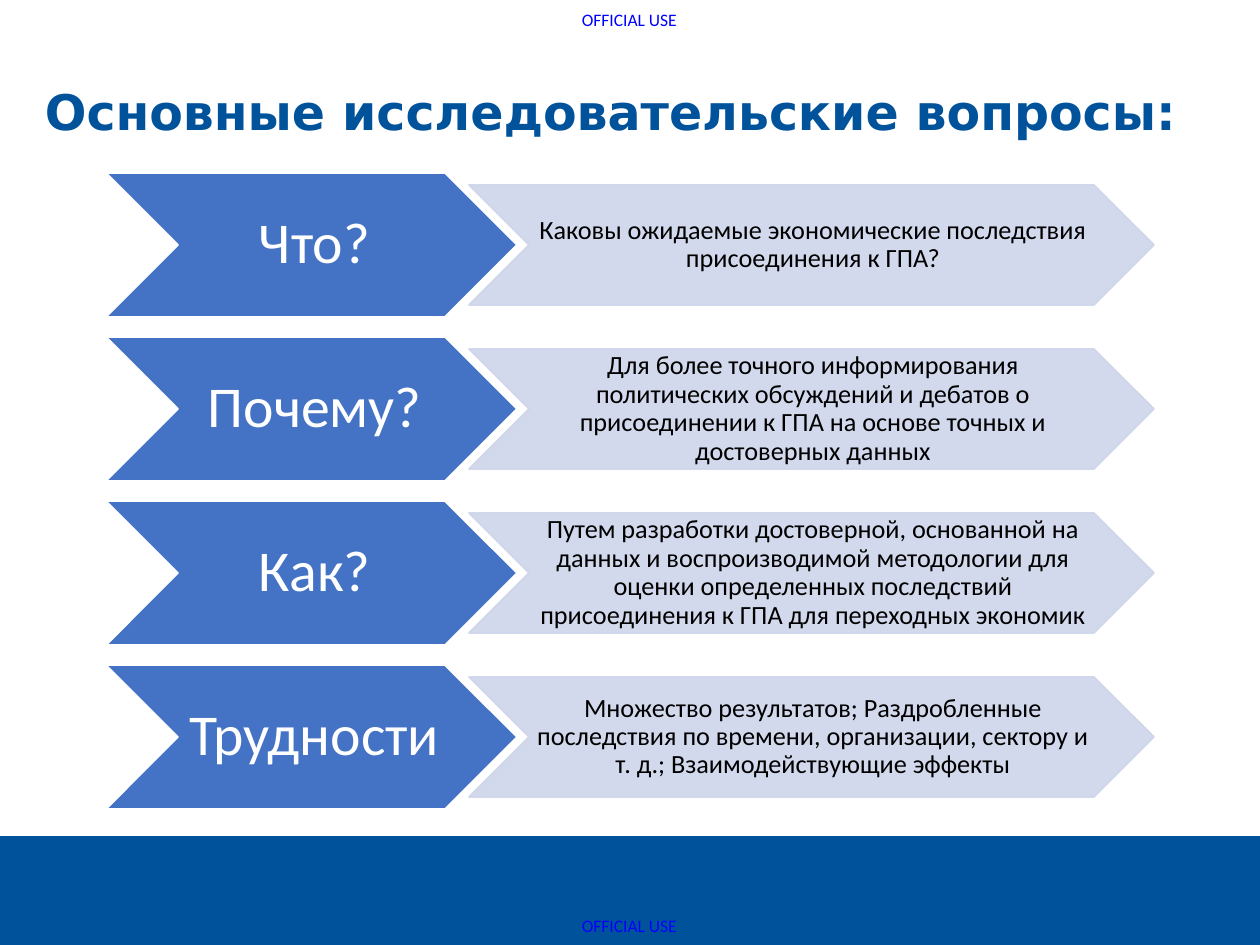
from lxml import etree
from pptx import Presentation
from pptx.dml.color import RGBColor
from pptx.enum.shapes import MSO_SHAPE
from pptx.enum.text import MSO_ANCHOR, PP_ALIGN
from pptx.oxml.ns import qn
from pptx.util import Pt

RECT, CHEVRON = MSO_SHAPE.RECTANGLE, MSO_SHAPE.CHEVRON
TOP, MIDDLE = MSO_ANCHOR.TOP, MSO_ANCHOR.MIDDLE
LEFT, CENTER = PP_ALIGN.LEFT, PP_ALIGN.CENTER

WIDTH, HEIGHT = 1260, 945
SCALE = 914400 / 126
COLORS = {
    "white": "FFFFFF",
    "black": "000000",
    "navy": "00539B",
    "blue": "4472C4",
    "pale": "CFD5EA",
    "label": "0000FF",
}
ROWS = [
    ("Что?", "Каковы ожидаемые экономические последствия присоединения к ГПА?"),
    ("Почему?", "Для более точного информирования политических обсуждений и "
                "дебатов о присоединении к ГПА на основе точных и достоверных данных"),
    ("Как?", "Путем разработки достоверной, основанной на данных и "
             "воспроизводимой методологии для оценки определенных последствий "
             "присоединения к ГПА для переходных экономик"),
    ("Трудности", "Множество результатов; Раздробленные последствия по времени, "
                  "организации, сектору и т. д.; Взаимодействующие эффекты"),
]
ROW_TOP, ROW_STEP = 173, 164


def emu(px):
    return round(px * SCALE)


def color(name):
    return RGBColor.from_string(COLORS[name])


class Deck:
    def __init__(self):
        self.prs = Presentation()
        self.prs.slide_width = emu(WIDTH)
        self.prs.slide_height = emu(HEIGHT)
        self.slide = self.prs.slides.add_slide(self.prs.slide_layouts[6])

    def label(self, frame, text, size, tint, font="Calibri", bold=False,
              align=LEFT, anchor=TOP, pad=(0, 0, 0, 0), space=0.9, wrap=True):
        frame.word_wrap = wrap
        frame.vertical_anchor = anchor
        frame.margin_left, frame.margin_top, frame.margin_right, frame.margin_bottom = map(emu, pad)
        para = frame.paragraphs[0]
        para.alignment = align
        para.line_spacing = space
        run = para.add_run()
        run.text = text
        run.font.name = font
        run.font.size = Pt(size)
        run.font.bold = bold
        run.font.color.rgb = color(tint)

    def text(self, x, y, w, h, words, size, tint, **style):
        box = self.slide.shapes.add_textbox(*map(emu, (x, y, w, h)))
        self.label(box.text_frame, words, size, tint, **style)

    def shape(self, kind, x, y, w, h, fill, line=None, alpha=None):
        item = self.slide.shapes.add_shape(kind, *map(emu, (x, y, w, h)))
        item.shadow.inherit = False
        item.fill.solid()
        item.fill.fore_color.rgb = color(fill)
        if line:
            item.line.color.rgb = color(line)
            item.line.width = Pt(1)
        else:
            item.line.fill.background()
        if alpha:
            for tint in item._element.spPr.iter(qn("a:srgbClr")):
                etree.SubElement(tint, qn("a:alpha"), val=str(alpha * 1000))
        return item

    def arrow(self, x, y, w, h, fill, line, words, size, tint, pad, alpha=None):
        item = self.shape(CHEVRON, x, y, w, h, fill, line, alpha)
        self.label(item.text_frame, words, size, tint, align=CENTER, anchor=MIDDLE, pad=pad)


def main():
    deck = Deck()
    deck.shape(RECT, 0, 836, 1261, 109, "navy")
    for y in (9, 915):
        deck.text(582, y, 100, 21, "OFFICIAL USE", 10, "label", space=1, wrap=False)
    deck.text(32, 82, 1228, 183, "Основные исследовательские вопросы:", 28, "navy",
              font="DejaVu Sans", bold=True, pad=(13, 6, 13, 6))
    for i, (head, body) in enumerate(ROWS):
        y = ROW_TOP + i * ROW_STEP
        deck.arrow(106, y, 411, 144, "blue", "white", head, 33, "white", (6, 3, 0, 3))
        deck.arrow(469, y + 12, 685, 120, "pale", "pale", body, 15, "black", (3, 1, 0, 1), alpha=90)
    deck.prs.save("out.pptx")


if __name__ == "__main__":
    main()
